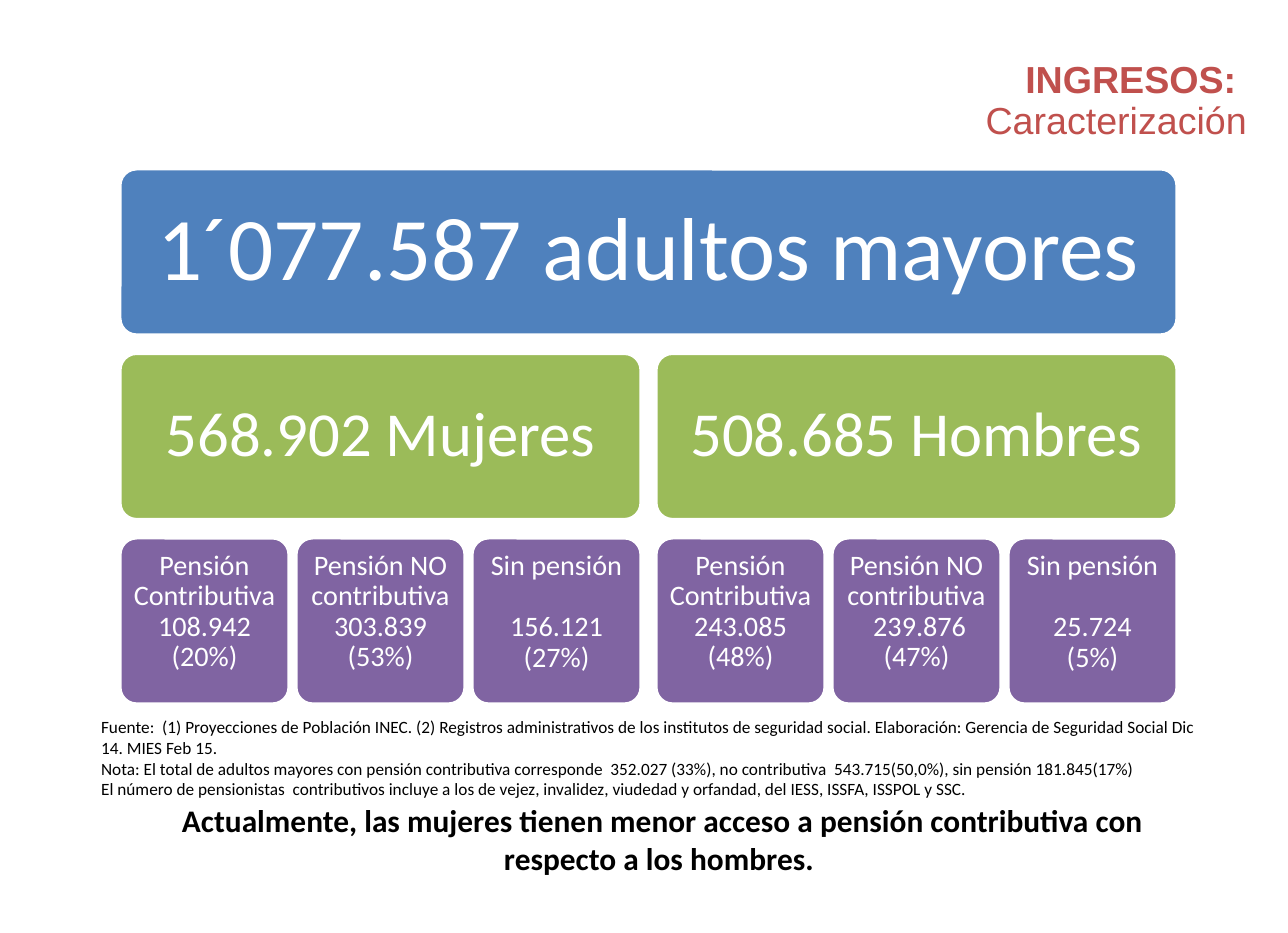
from pptx import Presentation
from pptx.dml.color import RGBColor
from pptx.enum.shapes import MSO_SHAPE as Shape
from pptx.enum.text import MSO_ANCHOR as Anchor, MSO_AUTO_SIZE as AutoSize, PP_ALIGN as Align
from pptx.util import Emu, Pt

PX = 8106
WHITE = RGBColor(0xFF, 0xFF, 0xFF)
BLACK = RGBColor(0x00, 0x00, 0x00)
RED = RGBColor(0xC0, 0x50, 0x4D)
BLUE = RGBColor(0x4F, 0x81, 0xBD)
GREEN = RGBColor(0x9B, 0xBB, 0x59)
PURPLE = RGBColor(0x80, 0x64, 0xA2)

LEFT, TOP, CARD_HEIGHT = 120, 169, 166
ROW_STEP, GROUP_STEP, PENSION_STEP = 184.5, 536, 176
TOTAL_WIDTH, GROUP_WIDTH, PENSION_WIDTH = 1057, 521, 169

PENSIONS = ["Pensión Contributiva", "Pensión NO contributiva", "Sin pensión"]
GROUPS = [
    ("568.902 Mujeres", [("108.942", "(20%)"), ("303.839", "(53%)"), ("156.121", "(27%)")]),
    ("508.685 Hombres", [("243.085", "(48%)"), (" 239.876", "(47%)"), ("25.724", "(5%)")]),
]
SOURCES = [
    "Fuente:  (1) Proyecciones de Población INEC. (2) Registros administrativos de los institutos "
    "de seguridad social. Elaboración: Gerencia de Seguridad Social Dic 14. MIES Feb 15.",
    "Nota: El total de adultos mayores con pensión contributiva corresponde  352.027 (33%), "
    "no contributiva  543.715(50,0%), sin pensión 181.845(17%)",
    "El número de pensionistas  contributivos incluye a los de vejez, invalidez, viudedad y "
    "orfandad, del IESS, ISSFA, ISSPOL y SSC.",
]
CONCLUSION = ("Actualmente, las mujeres tienen menor acceso a pensión contributiva con "
              "respecto a los hombres. ")


def px(length):
    """Turn a length in px into EMU."""
    return Emu(round(length * PX))


def apply(target, values):
    """Set each attribute of the target from a dict."""
    for name, value in values.items():
        setattr(target, name, value)


def style_font(font, size, color, bold=False, name="Calibri"):
    """Format a font."""
    apply(font, {"name": name, "size": Pt(size), "bold": bold})
    font.color.rgb = color


def write(frame, lines, size, color, bold=False, **layout):
    """Write one formatted paragraph for each line."""
    for index, line in enumerate(lines):
        para = frame.add_paragraph() if index else frame.paragraphs[0]
        para.text = line
        apply(para, layout)
        style_font(para.font, size, color, bold)


def add_title(page):
    """Fill the title placeholder with two lines."""
    title = page.shapes.title
    apply(title, {"left": px(440), "top": px(54), "width": px(818), "height": px(96)})
    apply(title.text_frame, {"auto_size": AutoSize.NONE, "vertical_anchor": Anchor.MIDDLE})
    para = title.text_frame.paragraphs[0]
    apply(para, {"alignment": Align.RIGHT, "line_spacing": 0.9})
    for text, bold in [("INGRESOS: ", True), ("Caracterización", False)]:
        if not bold:
            para.add_line_break()
        span = para.add_run()
        span.text = text
        style_font(span.font, 24, RED, bold, "Arial")


def add_text(page, left, top, width, height, lines, size, **layout):
    """Add a wrapped black text box."""
    box = page.shapes.add_textbox(px(left), px(top), px(width), px(height))
    box.text_frame.word_wrap = True
    write(box.text_frame, lines, size, BLACK, **layout)


def add_card(page, left, row, width, color, lines, size, inset, anchor=Anchor.MIDDLE):
    """Add a rounded card in a row and return its text frame."""
    card = page.shapes.add_shape(Shape.ROUNDED_RECTANGLE, px(left), px(TOP + row * ROW_STEP),
                                 px(width), px(CARD_HEIGHT))
    card.adjustments[0] = 0.1
    card.shadow.inherit = False
    card.fill.solid()
    card.fill.fore_color.rgb = color
    card.line.color.rgb = WHITE
    card.line.width = Pt(2)
    frame = card.text_frame
    apply(frame, {"word_wrap": True, "vertical_anchor": anchor})
    apply(frame, {f"margin_{side}": px(inset) for side in ("left", "top", "right", "bottom")})
    write(frame, lines, size, WHITE, alignment=Align.CENTER, line_spacing=0.9)
    return frame


def add_group(page, left, heading, figures):
    """Add a group card with its pension cards below."""
    add_card(page, left, 1, GROUP_WIDTH, GREEN, [heading], 40, 19)
    for column, (label, figure) in enumerate(zip(PENSIONS, figures)):
        frame = add_card(page, left + column * PENSION_STEP, 2, PENSION_WIDTH, PURPLE,
                         [label, *figure], 18, 8, Anchor.TOP)
        if label == "Sin pensión":
            frame.paragraphs[1].space_before = Pt(20)


def main():
    """Build the slide and save it."""
    deck = Presentation()
    apply(deck, {"slide_width": px(1288), "slide_height": px(933)})
    page = deck.slides.add_slide(deck.slide_layouts[5])
    add_title(page)
    add_text(page, 90, 711, 1123, 95, SOURCES, 11)
    add_text(page, 135, 796, 1055, 87, [CONCLUSION], 20, bold=True, alignment=Align.CENTER)
    add_card(page, LEFT, 0, TOTAL_WIDTH, BLUE, ["1´077.587 adultos mayores"], 57, 27)
    for index, (heading, figures) in enumerate(GROUPS):
        add_group(page, LEFT + index * GROUP_STEP, heading, figures)
    deck.save("out.pptx")


if __name__ == "__main__":
    main()
